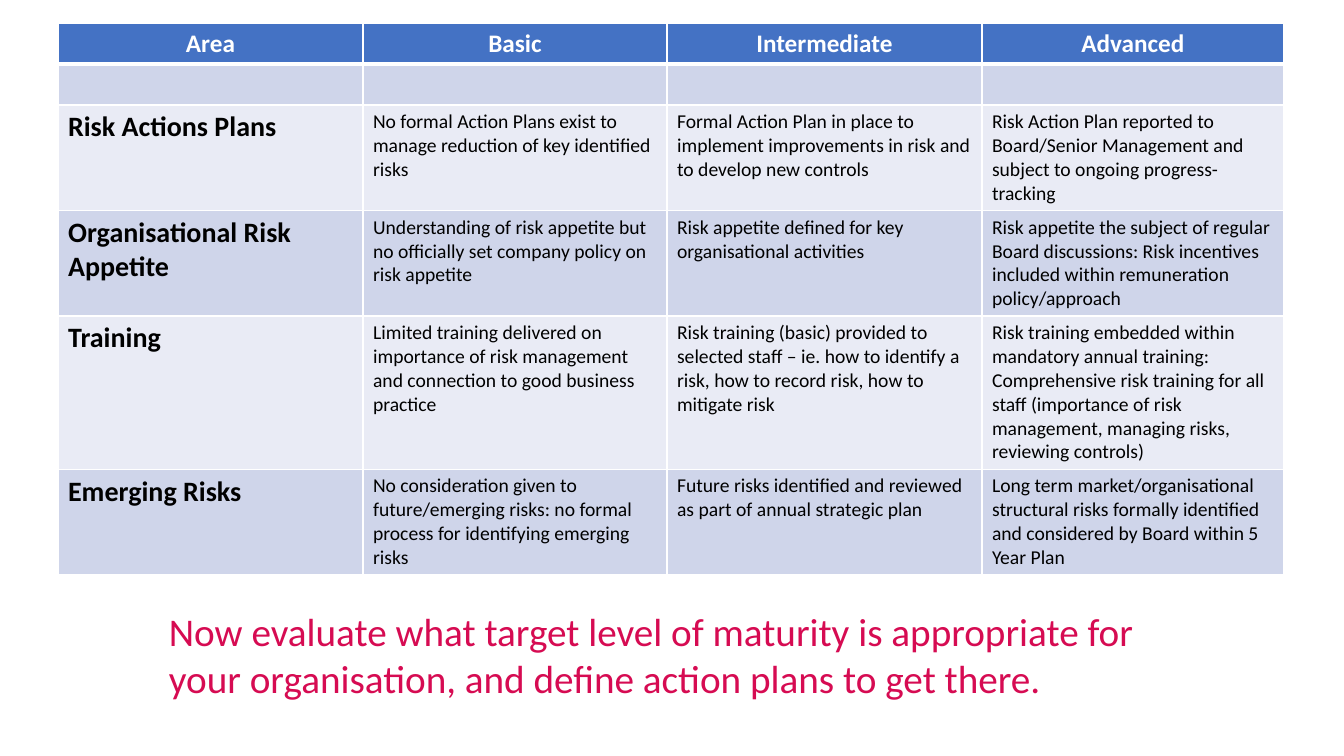
"""Build the risk maturity table slide with its closing call to action."""
from lxml.etree import SubElement
from pptx import Presentation
from pptx.dml.color import RGBColor
from pptx.enum.text import MSO_AUTO_SIZE, PP_ALIGN
from pptx.oxml.ns import qn
from pptx.util import Inches, Pt

WHITE = RGBColor(0xFF, 0xFF, 0xFF)
BLACK = RGBColor(0, 0, 0)
BLUE = RGBColor(0x44, 0x72, 0xC4)
BANDS = RGBColor(0xE9, 0xEB, 0xF5), RGBColor(0xCF, 0xD5, 0xEA)
PINK = RGBColor(0xD6, 0x0B, 0x52)

ROWS = [
    ("Area", "Basic", "Intermediate", "Advanced"),
    ("", "", "", ""),
    (
        "Risk Actions Plans",
        "No formal Action Plans exist to manage reduction of key identified risks",
        "Formal Action Plan in place to implement improvements in risk and to develop new controls",
        "Risk Action Plan reported to Board/Senior Management and subject to ongoing progress-tracking",
    ),
    (
        "Organisational Risk Appetite",
        "Understanding of risk appetite but no officially set company policy on risk appetite",
        "Risk appetite defined for key organisational activities",
        "Risk appetite the subject of regular Board discussions: Risk incentives included within "
        "remuneration policy/approach",
    ),
    (
        "Training",
        "Limited training delivered on importance of risk management and connection to good "
        "business practice",
        "Risk training (basic) provided to selected staff – ie. how to identify a risk, how to "
        "record risk, how to mitigate risk",
        "Risk training embedded within mandatory annual training: Comprehensive risk training for "
        "all staff (importance of risk management, managing risks, reviewing controls)",
    ),
    (
        "Emerging Risks",
        "No consideration given to future/emerging risks: no formal process for identifying "
        "emerging risks",
        "Future risks identified and reviewed as part of annual strategic plan",
        "Long term market/organisational structural risks formally identified and considered by "
        "Board within 5 Year Plan",
    ),
]
CALL = (
    "Now evaluate what target level of maturity is appropriate for your organisation, "
    "and define action plans to get there."
)

SLIDE = 1344, 756
WIDTHS = 305, 304, 315, 302
HEIGHTS = 41, 41, 104, 104, 151, 104
GRID = 58, 23, sum(WIDTHS), sum(HEIGHTS)
BOX = 159, 602, 1025, 105

HEAD = {"size": Pt(18), "bold": True, "color": WHITE}
AREA = {"size": Pt(20), "bold": True, "color": BLACK}
BODY = {"size": Pt(14), "bold": False, "color": BLACK}
CLOSE = {"size": Pt(28), "bold": False, "color": PINK}


def px(num):
    """Turn px into EMU."""
    return Inches(num / 100.8)


def write(frame, text, style, align=PP_ALIGN.LEFT):
    """Put one styled paragraph into a text frame."""
    para = frame.paragraphs[0]
    para.alignment = align
    if not text:
        return
    font = para.add_run().font
    para.runs[0].text = text
    for name, value in {"name": "Calibri", **style}.items():
        if name == "color":
            font.color.rgb = value
        else:
            setattr(font, name, value)


def edge(cell, sides):
    """Draw white cell borders, given as side and width in points."""
    props = cell._tc.get_or_add_tcPr()
    for side, width in sides.items():
        line = SubElement(props, qn(f"a:ln{side}"), w=str(Pt(width)))
        fill = SubElement(line, qn("a:solidFill"))
        SubElement(fill, qn("a:srgbClr"), val=str(WHITE))


def fill_table(table):
    """Size the grid, then fill and style each cell."""
    for col, width in zip(table.columns, WIDTHS):
        col.width = px(width)
    for row, height in zip(table.rows, HEIGHTS):
        row.height = px(height)
    for r, texts in enumerate(ROWS):
        for c, text in enumerate(texts):
            cell = table.cell(r, c)
            edge(cell, {"L": 1, "R": 1, "T": 3 if r == 1 else 1, "B": 1 if r else 3})
            cell.fill.solid()
            cell.fill.fore_color.rgb = BANDS[r % 2] if r else BLUE
            if r == 0:
                write(cell.text_frame, text, HEAD, PP_ALIGN.CENTER)
            else:
                write(cell.text_frame, text, BODY if c else AREA)


def main():
    """Lay out the slide and save it."""
    deck = Presentation()
    deck.slide_width, deck.slide_height = map(px, SLIDE)
    shapes = deck.slides.add_slide(deck.slide_layouts[6]).shapes
    fill_table(shapes.add_table(len(ROWS), len(WIDTHS), *map(px, GRID)).table)
    frame = shapes.add_textbox(*map(px, BOX)).text_frame
    frame.word_wrap = True
    frame.auto_size = MSO_AUTO_SIZE.SHAPE_TO_FIT_TEXT
    write(frame, CALL, CLOSE)
    deck.save("out.pptx")


if __name__ == "__main__":
    main()
